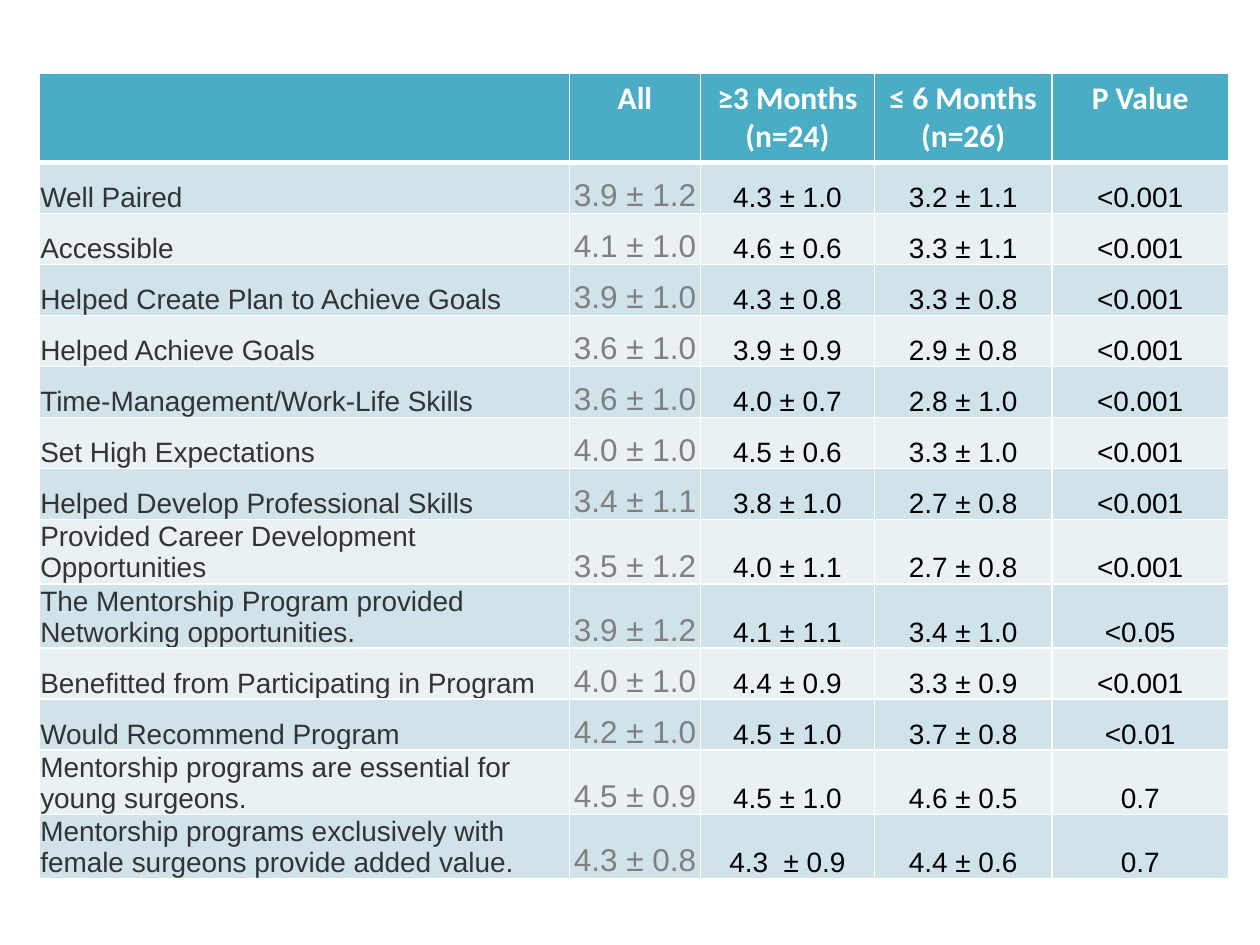
from pptx import Presentation
from pptx.dml.color import RGBColor as Rgb
from pptx.enum.text import MSO_ANCHOR as Anchor, PP_ALIGN as Align
from pptx.oxml import parse_xml
from pptx.oxml.ns import nsdecls
from pptx.util import Inches, Pt

HEAD = ["", "All", "≥3 Months\n(n=24)", "≤ 6 Months\n(n=26)", "P Value"]
ROWS = [
    ("Well Paired", "3.9 ± 1.2", "4.3 ± 1.0", "3.2 ± 1.1", "<0.001"),
    ("Accessible", "4.1 ± 1.0", "4.6 ± 0.6", "3.3 ± 1.1", "<0.001"),
    ("Helped Create Plan to Achieve Goals", "3.9 ± 1.0", "4.3 ± 0.8", "3.3 ± 0.8", "<0.001"),
    ("Helped Achieve Goals", "3.6 ± 1.0", "3.9 ± 0.9", "2.9 ± 0.8", "<0.001"),
    ("Time-Management/Work-Life Skills", "3.6 ± 1.0", "4.0 ± 0.7", "2.8 ± 1.0", "<0.001"),
    ("Set High Expectations", "4.0 ± 1.0", "4.5 ± 0.6", "3.3 ± 1.0", "<0.001"),
    ("Helped Develop Professional Skills", "3.4 ± 1.1", "3.8 ± 1.0", "2.7 ± 0.8", "<0.001"),
    ("Provided Career Development Opportunities", "3.5 ± 1.2", "4.0 ± 1.1", "2.7 ± 0.8", "<0.001"),
    ("The Mentorship Program provided Networking opportunities.",
     "3.9 ± 1.2", "4.1 ± 1.1", "3.4 ± 1.0", "<0.05"),
    ("Benefitted from Participating in Program", "4.0 ± 1.0", "4.4 ± 0.9", "3.3 ± 0.9", "<0.001"),
    ("Would Recommend Program", "4.2 ± 1.0", "4.5 ± 1.0", "3.7 ± 0.8", "<0.01"),
    ("Mentorship programs are essential for young surgeons.",
     "4.5 ± 0.9", "4.5 ± 1.0", "4.6 ± 0.5", "0.7"),
    ("Mentorship programs exclusively with female surgeons provide added value.",
     "4.3 ± 0.8", "4.3  ± 0.9", "4.4 ± 0.6", "0.7"),
]
HEX = {"head": "4BACC6", "odd": "D0E3EA", "even": "E9F1F5", "white": "FFFFFF",
       "label": "333333", "all": "808080", "value": "000000"}
STYLES = [("label", 16), ("all", 18), ("value", 16), ("value", 16), ("value", 16)]
WIDE, HIGH = 10, 7.5
COLS = [42.1, 10.4, 13.8, 14.1, 14]
HEAD_H, ROW_H, TALL_H = 9.3, 5.4, 6.8
WRAP = 40


def set_edges(cell, top, bottom):
    props = cell._tc.get_or_add_tcPr()
    for spot, (side, width) in enumerate(zip("LRTB", (1, 1, top, bottom))):
        props.insert(spot, parse_xml(
            f'<a:ln{side} {nsdecls("a")} w="{Pt(width)}"><a:solidFill>'
            f'<a:srgbClr val="{HEX["white"]}"/></a:solidFill></a:ln{side}>'))


def fill_cell(cell, text, fill, ink, size, font, bold, align):
    cell.fill.solid()
    cell.fill.fore_color.rgb = Rgb.from_string(HEX[fill])
    cell.text_frame.text = text
    for para in cell.text_frame.paragraphs:
        para.alignment = align
        for run in para.runs:
            run.font.size, run.font.name, run.font.bold = Pt(size), font, bold
            run.font.color.rgb = Rgb.from_string(HEX[ink])


def set_pad(cell, side, top, bottom):
    cell.margin_left = cell.margin_right = Inches(side)
    cell.margin_top, cell.margin_bottom = Inches(top), Inches(bottom)


def main():
    deck = Presentation()
    deck.slide_width, deck.slide_height = Inches(WIDE), Inches(HIGH)
    slide = deck.slides.add_slide(deck.slide_layouts[6])
    heights = [HEAD_H] + [TALL_H if len(row[0]) > WRAP else ROW_H for row in ROWS]
    table = slide.shapes.add_table(
        len(heights), len(COLS), Inches(0.31), Inches(0.58),
        Inches(WIDE * sum(COLS) / 100), Inches(HIGH * sum(heights) / 100)).table
    for col, share in zip(table.columns, COLS):
        col.width = Inches(WIDE * share / 100)
    for row, share in zip(table.rows, heights):
        row.height = Inches(HIGH * share / 100)

    for c, text in enumerate(HEAD):
        cell = table.cell(0, c)
        fill_cell(cell, text, "head", "white", 18, "Calibri", True, Align.CENTER)
        set_pad(cell, 0.07, 0.05, 0.05)
        set_edges(cell, 1, 3)
    for r, row in enumerate(ROWS, 1):
        for c, (text, (ink, size)) in enumerate(zip(row, STYLES)):
            cell = table.cell(r, c)
            align = Align.CENTER if c else Align.LEFT
            fill_cell(cell, text, "odd" if r % 2 else "even", ink, size, "Arial", False, align)
            cell.vertical_anchor = Anchor.BOTTOM
            set_pad(cell, 0.01, 0.01, 0)
            set_edges(cell, 3 if r == 1 else 1, 1)
    deck.save("out.pptx")


if __name__ == "__main__":
    main()
